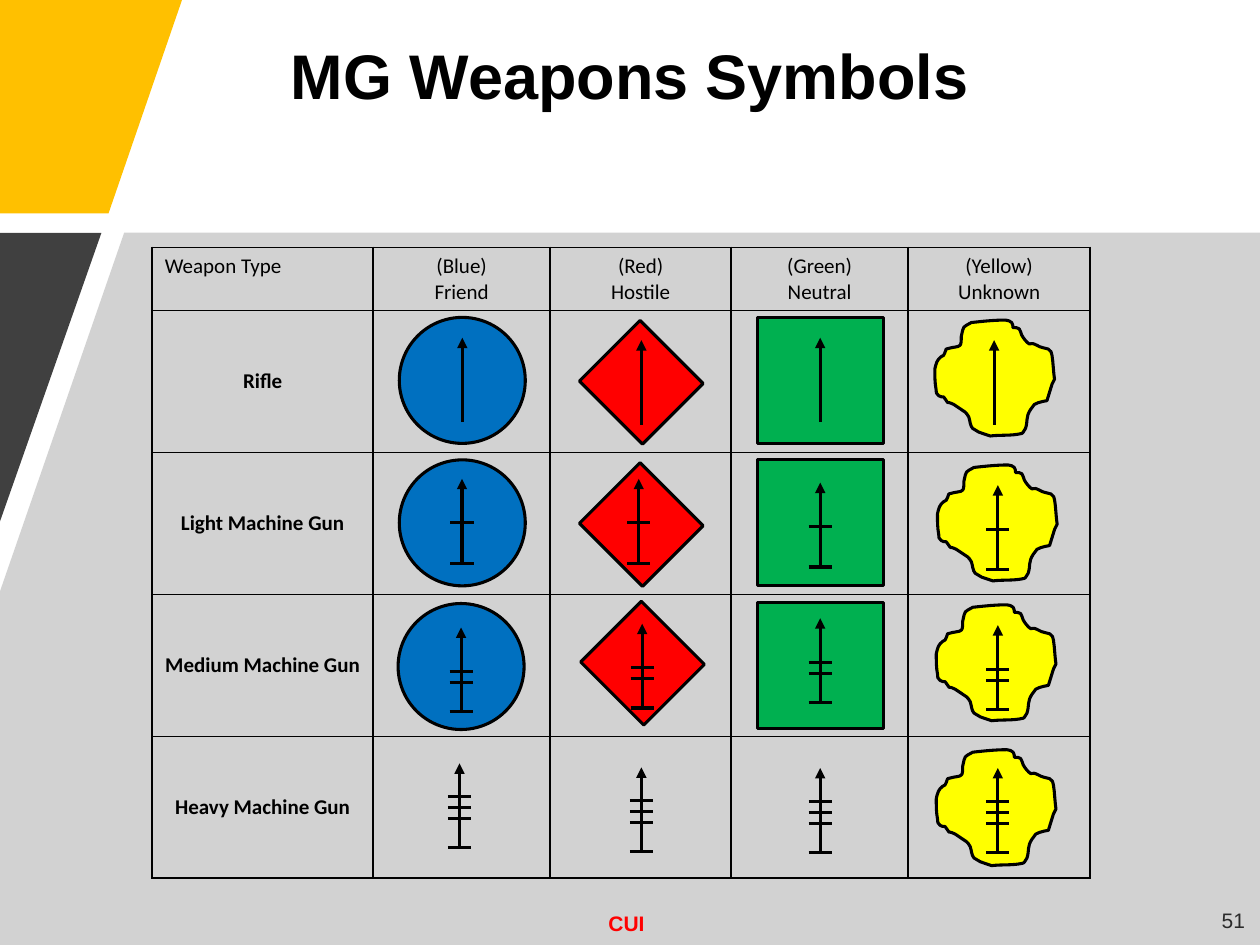
from dataclasses import dataclass

from lxml import etree
from pptx import Presentation
from pptx import util as u
from pptx.dml.color import RGBColor
from pptx.enum import shapes, text
from pptx.oxml import ns

Pt = u.Pt
BLACK = "000000"
LINE_WIDTH = 1.75
ARROW_LENGTH = 48.2
BAR_HALF = 6.6
FRAME_SIDE = 72
DIAMOND_SIZE = (49, 51)
UNIT = 0.72  # points per unit of the cloud outline


@dataclass
class Symbol:
    x: float  # arrow shaft
    base: float  # arrow foot
    frame: tuple[float, float] | None = None  # left and top


@dataclass
class Affiliation:
    heading: str
    kind: str
    color: str
    symbols: list[Symbol]  # one for each weapon


@dataclass
class Weapon:
    name: str
    bars: tuple[float, ...]  # heights above the arrow foot


WEAPONS = [
    Weapon("Rifle", ()),
    Weapon("Light Machine Gun", (0, 23)),
    Weapon("Medium Machine Gun", (0, 16.7, 23)),
    Weapon("Heavy Machine Gun", (0, 16.7, 23, 29.2)),
]

AFFILIATIONS = [
    Affiliation("(Blue)\nFriend", "circle", "0070C0", [
        Symbol(264.2, 241.2, (228.2, 181.4)), Symbol(264, 321.8, (228.2, 262.8)),
        Symbol(263.5, 406.8, (227.5, 344.9)), Symbol(262.6, 484.4)]),
    Affiliation("(Red)\nHostile", "diamond", "FF0000", [
        Symbol(366.5, 242.6, (342, 193)), Symbol(365, 321.8, (342, 274.3)),
        Symbol(367, 404.6, (342.7, 353.5)), Symbol(366.5, 486.7)]),
    Affiliation("(Green)\nNeutral", "square", "00B050", [
        Symbol(468.7, 241.2, (432.7, 181.4)), Symbol(468.7, 324, (432.7, 262.8)),
        Symbol(468.7, 401.5, (432.7, 344.2)), Symbol(468.7, 487.1)]),
    Affiliation("(Yellow)\nUnknown", "cloud", "FFFF00", [
        Symbol(568.1, 242.6, (534.2, 182.9)), Symbol(570.2, 325.4, (535.7, 265.7)),
        Symbol(570.2, 405.4, (535, 345.6)), Symbol(570.2, 487.1, (535, 428.4))]),
]

# Cloud outline: six numbers make a curve, two make a straight side
CLOUD_START = (75, 19)
CLOUD = [
    (73, 18, 70, 14, 69, 12), (68, 10, 68, 8, 67, 7), (66, 6, 64, 6, 62, 6),
    (62, 5, 62, 3, 61, 2), (60, 1, 58, 0, 56, 0), (47, 0, 38, 1, 29, 2),
    (22, 6, 23, 4, 21, 13), (21, 16, 21, 19, 20, 20), (18, 22, 15, 21, 13, 22),
    (12, 22, 10, 23, 9, 23), (8, 25, 8, 27, 7, 28), (6, 29, 4, 29, 3, 31),
    (1, 33, 0, 39, 0, 39), (0, 45, 0, 50, 1, 55), (1, 57, 1, 59, 3, 60),
    (4, 61, 6, 61, 7, 61), (13, 69, 7, 63, 15, 67), (18, 69, 24, 73, 24, 73),
    (25, 74, 26, 75, 27, 77), (28, 80, 28, 84, 30, 86), (32, 87, 33, 88, 35, 89),
    (38, 90, 44, 92, 44, 92), (52, 91, 61, 92, 69, 90), (70, 90, 71, 87, 72, 86),
    (74, 80, 72, 77, 76, 71), (77, 70, 78, 68, 79, 67), (82, 65, 89, 64, 89, 64),
    (93, 51), (95, 47), (94, 40, 94, 34, 93, 28), (93, 26, 92, 24, 90, 23),
    (87, 22, 84, 22, 81, 20), (75, 17, 77, 20, 75, 19),
]


def rgb(color: str) -> RGBColor:
    return RGBColor.from_string(color)


def sub(parent, tag: str, **attrs: str):
    return etree.SubElement(parent, ns.qn(tag), attrs)


def set_alpha(element, percent: int) -> None:
    """Make the first colour inside the element partly transparent."""
    sub(next(element.iter(ns.qn("a:srgbClr"))), "a:alpha", val=str(percent * 1000))


def style(sp, fill: str, line: str | None = None) -> None:
    sp.shadow.inherit = False
    sp.fill.solid()
    sp.fill.fore_color.rgb = rgb(fill)
    if line:
        sp.line.color.rgb = rgb(line)
        sp.line.width = Pt(LINE_WIDTH)
    else:
        sp.line.fill.background()


def add_polygon(s, points: list[tuple[float, float]], fill: str):
    builder = s.shapes.build_freeform(*points[0], scale=Pt(1))
    builder.add_line_segments(points[1:], close=True)
    sp = builder.convert_to_shape()
    style(sp, fill)
    return sp


def add_cloud(s, left: float, top: float):
    points = [seg[i:i + 2] for seg in CLOUD for i in range(0, len(seg), 2)]
    builder = s.shapes.build_freeform(*CLOUD_START, scale=Pt(UNIT))
    builder.add_line_segments(points, close=True)
    sp = builder.convert_to_shape(Pt(left), Pt(top))
    # Join each three points of a curve into one Bezier segment
    sides = iter(list(sp._element.iter(ns.qn("a:lnTo"))))
    for seg in CLOUD:
        first, *others = [next(sides) for _ in range(len(seg) // 2)]
        if others:
            first.tag = ns.qn("a:cubicBezTo")
            for side in others:
                first.append(side[0])
                side.getparent().remove(side)
    return sp


def add_frame(s, kind: str, color: str, left: float, top: float) -> None:
    if kind == "cloud":
        sp = add_cloud(s, left, top)
    else:
        preset = shapes.MSO_SHAPE.OVAL if kind == "circle" else shapes.MSO_SHAPE.RECTANGLE
        size = DIAMOND_SIZE if kind == "diamond" else (FRAME_SIDE, FRAME_SIDE)
        sp = s.shapes.add_shape(preset, Pt(left), Pt(top), Pt(size[0]), Pt(size[1]))
        sp.rotation = 315 if kind == "diamond" else 0
    style(sp, color, BLACK)


def add_line(group, x1: float, y1: float, x2: float, y2: float, arrow: bool = False) -> None:
    c = group.shapes.add_connector(
        shapes.MSO_CONNECTOR.STRAIGHT, Pt(x1), Pt(y1), Pt(x2), Pt(y2))
    c.line.color.rgb = rgb(BLACK)
    c.line.width = Pt(LINE_WIDTH)
    if arrow:
        sub(c.line._get_or_add_ln(), "a:tailEnd", type="triangle")
    sub(c._element.spPr, "a:effectLst")


def add_weapon(s, symbol: Symbol, weapon: Weapon) -> None:
    target = s.shapes.add_group_shape() if weapon.bars else s
    x, base = symbol.x, symbol.base
    for height in weapon.bars:
        add_line(target, x - BAR_HALF, base - height, x + BAR_HALF, base - height)
    add_line(target, x, base, x, base - ARROW_LENGTH, arrow=True)


def set_font(p, size: float, name: str, color: str, bold: bool = False) -> None:
    p.font.size = Pt(size)
    p.font.name = name
    p.font.bold = bold
    p.font.color.rgb = rgb(color)


def add_text(s, box: tuple[float, ...], words: str, size: float, color: str,
             bold: bool, align, anchor, wrap: bool = True):
    tf = s.shapes.add_textbox(*map(Pt, box)).text_frame
    tf.word_wrap = wrap
    tf.vertical_anchor = anchor
    p = tf.paragraphs[0]
    p.text = words
    p.alignment = align
    set_font(p, size, "Arial", color, bold)
    return p


def fill_cell(cell, words: str, align, bold: bool) -> None:
    cell.text = words
    for p in cell.text_frame.paragraphs:
        p.alignment = align
        set_font(p, 12, "Calibri", BLACK, bold)
    if bold:
        cell.vertical_anchor = text.MSO_ANCHOR.MIDDLE
        cell.margin_left = cell.margin_right = Pt(5)


def add_grid(s) -> None:
    widths, heights = [126.2, 101.2, 103.4, 101.2, 104], [36] + [81.15] * len(WEAPONS)
    table = s.shapes.add_table(len(heights), len(widths), Pt(87), Pt(141.3),
                               Pt(sum(widths)), Pt(sum(heights))).table
    table.first_row = table.horz_banding = False
    for column, width in zip(table.columns, widths):
        column.width = Pt(width)
    for row, height in zip(table.rows, heights):
        row.height = Pt(height)
    for cell in table.iter_cells():
        tc_pr = cell._tc.get_or_add_tcPr()
        for side in ("a:lnL", "a:lnR", "a:lnT", "a:lnB"):
            ln = sub(tc_pr, side, w=str(Pt(1)))
            sub(sub(ln, "a:solidFill"), "a:srgbClr", val=BLACK)
        cell.fill.background()
    fill_cell(table.cell(0, 0), "Weapon Type", text.PP_ALIGN.LEFT, False)
    for col, side in enumerate(AFFILIATIONS, 1):
        fill_cell(table.cell(0, col), side.heading, text.PP_ALIGN.CENTER, False)
    for row, weapon in enumerate(WEAPONS, 1):
        fill_cell(table.cell(row, 0), weapon.name, text.PP_ALIGN.CENTER, True)


def main() -> None:
    prs = Presentation()
    prs.slide_width, prs.slide_height = Pt(720), Pt(540)
    s = prs.slides.add_slide(prs.slide_layouts[6])
    align, anchor = text.PP_ALIGN, text.MSO_ANCHOR

    # Background shapes
    add_polygon(s, [(0, 0), (104.4, 0), (61.5, 122.4), (0, 122.4)], "FFC000")
    band = add_polygon(
        s, [(71.3, 133.2), (720, 133.2), (720, 540), (0, 540), (0, 338.4)], "A6A6A6")
    set_alpha(band._element, 50)
    add_polygon(s, [(0, 133.2), (57.6, 133.2), (0, 298)], "404040")

    # Title, marking and page number
    add_text(s, (340.6, 517, 35.3, 21.6), "CUI", 12, "FF0000", True,
             align.LEFT, anchor.TOP, wrap=False)
    number = add_text(s, (690.5, 511.2, 28, 28.8), "51", 12, BLACK, False,
                      align.RIGHT, anchor.MIDDLE)
    number.space_after = Pt(6)
    set_alpha(number._p, 80)
    add_text(s, (0, 28.1, 720, 39.6), "MG Weapons Symbols", 36, BLACK, True,
             align.CENTER, anchor.BOTTOM)

    # Table and the symbols in it
    add_grid(s)
    for side in AFFILIATIONS:
        for symbol, weapon in zip(side.symbols, WEAPONS):
            if symbol.frame:
                add_frame(s, side.kind, side.color, *symbol.frame)
            add_weapon(s, symbol, weapon)

    prs.save("out.pptx")


if __name__ == "__main__":
    main()
